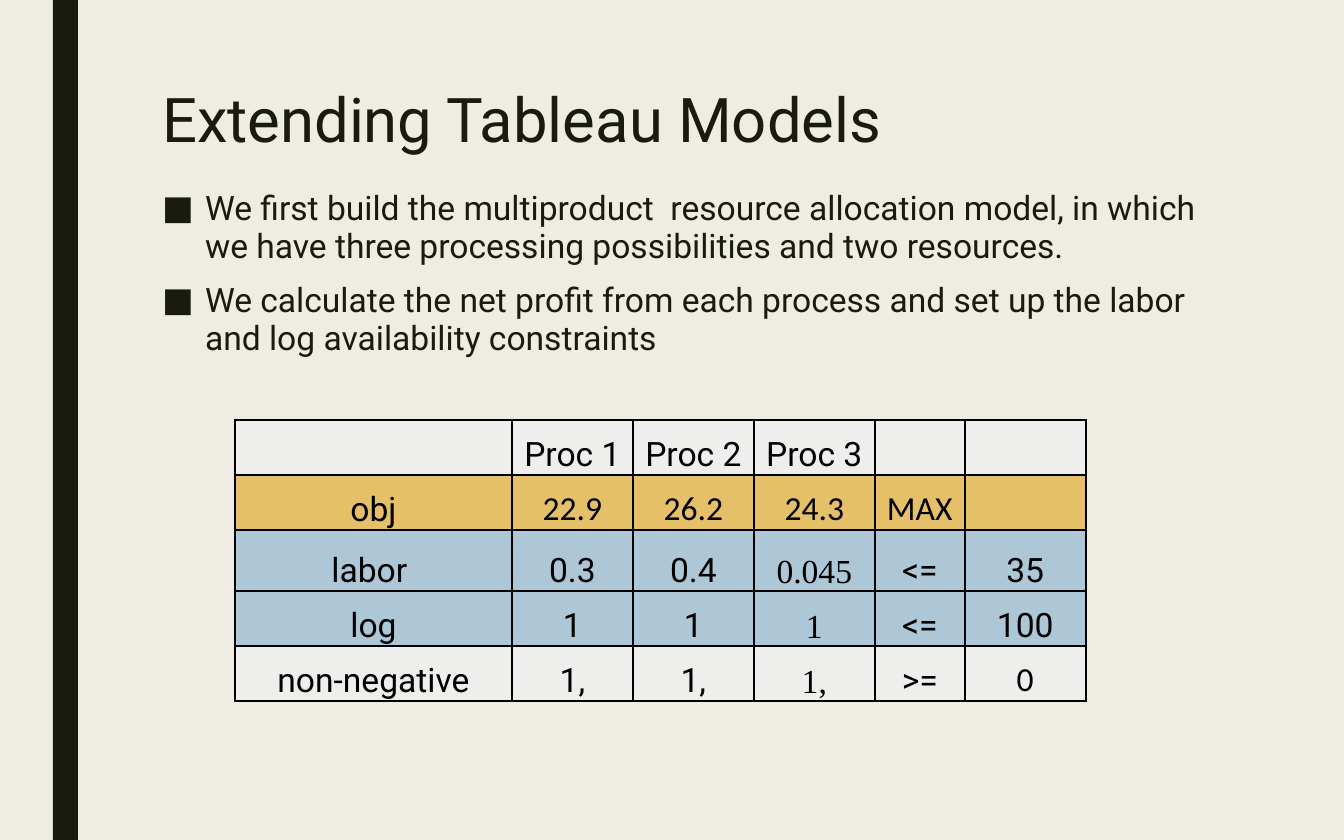
from lxml.etree import SubElement
from pptx import Presentation
from pptx.dml.color import RGBColor
from pptx.enum.shapes import MSO_SHAPE
from pptx.enum.text import MSO_ANCHOR, MSO_AUTO_SIZE, PP_ALIGN
from pptx.oxml.ns import qn
from pptx.util import Pt

SCALE = 914400 / 134.4
INK = {"back": "EFEDE3", "dark": "191B0E", "black": "000000",
       "plain": "EEEEED", "gold": "E6C069", "blue": "ADC7D6"}
BODY, NUM, SERIF = "Roboto", "Calibri", "Times New Roman"
POINTS = [
    "We first build the multiproduct  resource allocation model, in which "
    "we have three processing possibilities and two resources.",
    "We calculate the net profit from each process and set up the labor "
    "and log availability constraints",
]
COLS = [277, 121, 121, 121, 90, 121]
ROWS = [
    (55, "plain", ["", "Proc 1", "Proc 2", "Proc 3", "", ""]),
    (55, "gold", ["obj", "22.9", "26.2", "24.3", "MAX", ""]),
    (61, "blue", ["labor ", "0.3", "0.4", "0.045", "<=", "35"]),
    (55, "blue", ["log", "1", "1", "1", "<=", "100"]),
    (55, "plain", ["non-negative", "1,", "1,", "1,", ">=", "0"]),
]
FACES = {(1, col): NUM for col in range(1, 5)}
FACES.update({(row, 3): SERIF for row in range(2, 5)})
FACES[4, 5] = NUM


def px(num):
    """Turn pixels into EMU."""
    return round(num * SCALE)


def tint(name):
    """Return the named colour."""
    return RGBColor.from_string(INK[name])


def style(font, face, size, color):
    """Set face, size and colour of a font."""
    font.name, font.size = face, Pt(size)
    font.color.rgb = tint(color)


def place(shape, box):
    """Move a shape into a box of pixels."""
    shape.left, shape.top, shape.width, shape.height = map(px, box)


def add_bar(slide, box):
    """Draw the dark upright bar."""
    bar = slide.shapes.add_shape(MSO_SHAPE.RECTANGLE, *map(px, box))
    bar.shadow.inherit = False
    bar.fill.solid()
    bar.fill.fore_color.rgb = tint("dark")
    bar.line.fill.background()


def fill_text(shape, box, lines, size, pitch):
    """Place a placeholder and write its left-aligned lines."""
    place(shape, box)
    frame = shape.text_frame
    frame.text = "\n".join(lines)
    frame.word_wrap = True
    frame.auto_size = MSO_AUTO_SIZE.NONE
    frame.vertical_anchor = MSO_ANCHOR.TOP
    frame.margin_left = frame.margin_right = px(11)
    frame.margin_top = frame.margin_bottom = px(5)
    for para in frame.paragraphs:
        para.alignment = PP_ALIGN.LEFT
        para.line_spacing = pitch
        for run in para.runs:
            style(run.font, BODY, size, "dark")


def add_list(shape, box):
    """Write the list with square bullets."""
    fill_text(shape, box, POINTS, 18, 0.94)
    for para in shape.text_frame.paragraphs:
        para.space_before, para.space_after = Pt(7.5), Pt(1.5)
        props = para._p.get_or_add_pPr()
        props.set("marL", str(px(43)))
        props.set("indent", str(px(-43)))
        SubElement(props, qn("a:buFont"), typeface=BODY)
        SubElement(props, qn("a:buChar"), char="■")


def edge(cell):
    """Give a cell thin black borders."""
    props = cell._tc.get_or_add_tcPr()
    for side in ("lnL", "lnR", "lnT", "lnB"):
        line = SubElement(props, qn(f"a:{side}"), w=str(Pt(1)))
        solid = SubElement(line, qn("a:solidFill"))
        SubElement(solid, qn("a:srgbClr"), val=INK["black"])


def set_cell(cell, text, face, color):
    """Write and format one cell."""
    edge(cell)
    cell.fill.solid()
    cell.fill.fore_color.rgb = tint(color)
    cell.vertical_anchor = MSO_ANCHOR.BOTTOM
    cell.margin_left = cell.margin_right = cell.margin_top = px(1)
    cell.margin_bottom = 0
    cell.text_frame.text = text
    para = cell.text_frame.paragraphs[0]
    para.alignment = PP_ALIGN.CENTER
    for run in para.runs:
        style(run.font, face, 18, "black")


def add_grid(slide, left, top):
    """Build the model table from its top left corner."""
    box = left, top, sum(COLS), sum(row[0] for row in ROWS)
    grid = slide.shapes.add_table(len(ROWS), len(COLS), *map(px, box)).table
    grid.first_row = grid.horz_banding = False
    for col, width in zip(grid.columns, COLS):
        col.width = px(width)
    for r, (height, color, texts) in enumerate(ROWS):
        grid.rows[r].height = px(height)
        for c, text in enumerate(texts):
            set_cell(grid.cell(r, c), text, FACES.get((r, c), BODY), color)


def main():
    """Build and save the slide."""
    deck = Presentation()
    deck.slide_width, deck.slide_height = px(1344), px(840)
    slide = deck.slides.add_slide(deck.slide_layouts[1])
    slide.background.fill.solid()
    slide.background.fill.fore_color.rgb = tint("back")
    add_bar(slide, (53, 0, 25, 840))
    title, body = slide.placeholders
    fill_text(title, (151, 85, 1059, 90), ["Extending Tableau Models"], 33, 0.89)
    add_list(body, (151, 185, 1059, 534))
    add_grid(slide, 235, 420)
    deck.save("out.pptx")


if __name__ == "__main__":
    main()
